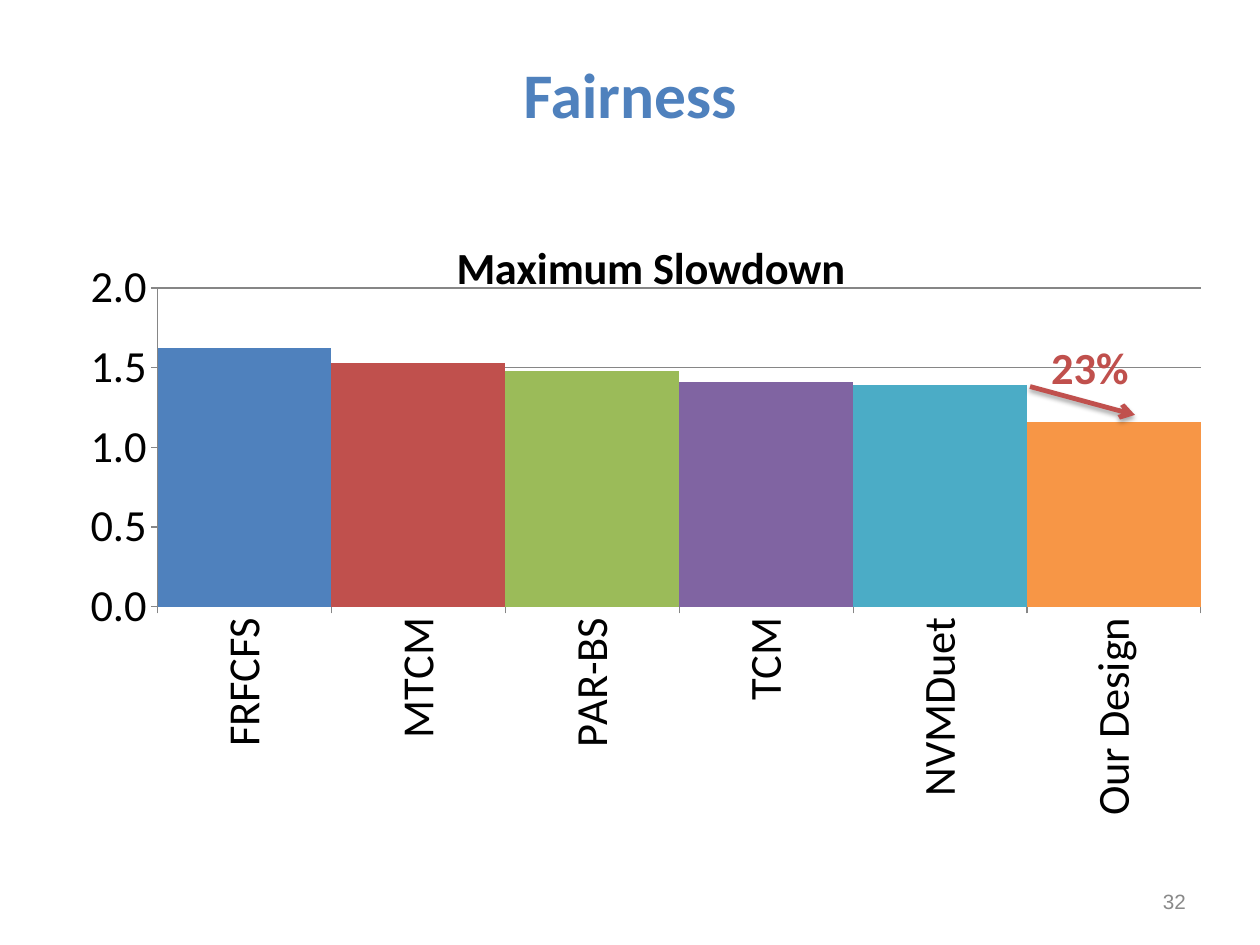
"""Build the Fairness slide: a maximum slowdown column chart with a callout."""
from pptx import Presentation, util as u
from pptx.chart import data
from pptx.dml import color
from pptx.enum import chart as ch, shapes, text
from pptx.oxml import parse_xml
from pptx.oxml.ns import nsdecls, qn

C = {"blue": "4F81BD", "red": "C0504D", "green": "9BBB59", "purple": "8064A2",
     "teal": "4BACC6", "orange": "F79646", "black": "000000",
     "grey": "898989", "axis": "868686"}
SLOWDOWN = [("FRFCFS", 1.62, "blue"), ("MTCM", 1.53, "red"),
            ("PAR-BS", 1.48, "green"), ("TCM", 1.41, "purple"),
            ("NVMDuet", 1.39, "teal"), ("Our Design", 1.16, "orange")]


def set_font(font, name, size, key, bold=False):
    font.name, font.size, font.bold = name, u.Pt(size), bold
    font.color.rgb = color.RGBColor.from_string(C[key])


def set_layout(parent, index, target="", **place):
    for old in parent.findall(qn("c:layout")):
        parent.remove(old)
    modes = "".join(f'<c:{k}Mode val="edge"/>' for k in "xy")
    values = "".join(f'<c:{k} val="{v}"/>' for k, v in place.items())
    parent.insert(index, parse_xml(
        f'<c:layout {nsdecls("c")}><c:manualLayout>{target}{modes}{values}'
        '</c:manualLayout></c:layout>'))


prs = Presentation()
prs.slide_width, prs.slide_height = u.Cm(28), u.Cm(21)
s = prs.slides.add_slide(prs.slide_layouts[6])

cd = data.CategoryChartData(number_format="0.00")
cd.categories = [name for name, _, _ in SLOWDOWN]
cd.add_series("Maximum Slowdown", [value for _, value, _ in SLOWDOWN])
chart = s.shapes.add_chart(ch.XL_CHART_TYPE.COLUMN_CLUSTERED, u.Cm(1.73), u.Cm(4.37),
                           u.Cm(24.97), u.Cm(14.4), cd).chart
set_font(chart.font, "Calibri", 18, "black")
chart.has_legend = False
chart.has_title = True
p = chart.chart_title.text_frame.paragraphs[0]
p.text = "Maximum Slowdown"
set_font(p.font, "Calibri", 28, "black", True)
set_layout(chart.chart_title._element, 1, x=0.33, y=0.05)
set_layout(chart._chartSpace.chart.plotArea, 0, '<c:layoutTarget val="inner"/>',
           x=0.071, y=0.141, w=0.929, h=0.492)

plot = chart.plots[0]
plot.gap_width = 0
plot.vary_by_categories = False
for i, (_, _, key) in enumerate(SLOWDOWN):
    fill = plot.series[0].points[i].format.fill
    fill.solid()
    fill.fore_color.rgb = color.RGBColor.from_string(C[key])

val, cat = chart.value_axis, chart.category_axis
val.minimum_scale, val.maximum_scale, val.major_unit = 0, 2, 0.5
val.has_major_gridlines = True
val.tick_labels.number_format = "#,##0.0"
val.tick_labels.number_format_is_linked = False
for axis in (val, cat):
    axis.major_tick_mark = ch.XL_TICK_MARK.OUTSIDE
    axis.minor_tick_mark = ch.XL_TICK_MARK.NONE
    set_font(axis.tick_labels.font, "Calibri", 28, "black")
for line in (val.format.line, cat.format.line, val.major_gridlines.format.line):
    line.width = u.Pt(0.75)
    line.color.rgb = color.RGBColor.from_string(C["axis"])
cat._element.find(qn("c:txPr")).find(qn("a:bodyPr")).set("rot", "-5400000")

arrow = s.shapes.add_connector(shapes.MSO_CONNECTOR.STRAIGHT, u.Cm(22.89), u.Cm(8.59),
                               u.Cm(25.22), u.Cm(9.22))
arrow.line.width = u.Pt(3)
arrow.line.color.rgb = color.RGBColor.from_string(C["red"])
arrow.line._get_or_add_ln().append(parse_xml(f'<a:tailEnd {nsdecls("a")} type="arrow"/>'))
arrow._element.spPr.append(parse_xml(
    f'<a:effectLst {nsdecls("a")}><a:outerShdw blurRad="{u.Pt(3.1)}" dist="{u.Pt(1.8)}" '
    f'dir="5400000" rotWithShape="0"><a:srgbClr val="{C["black"]}"><a:alpha val="35000"/>'
    '</a:srgbClr></a:outerShdw></a:effectLst>'))

A, V = text.PP_ALIGN, text.MSO_ANCHOR
TEXTS = [
    ("Fairness", (1.4, 0.84, 25.2, 2.46), A.CENTER, V.MIDDLE, "Calibri", 40, "blue", True),
    ("32", (20.07, 19.46, 6.53, 1.12), A.RIGHT, V.MIDDLE, "Arial", 13, "grey", False),
    ("23%", (23.11, 7.54, 2.54, 1.37), A.LEFT, V.TOP, "Calibri", 28, "red", True),
]
for words, box, align, anchor, name, size, key, bold in TEXTS:
    tf = s.shapes.add_textbox(*map(u.Cm, box)).text_frame
    tf.word_wrap = True
    tf.vertical_anchor = anchor
    p = tf.paragraphs[0]
    p.text, p.alignment = words, align
    set_font(p.font, name, size, key, bold)
p.line_spacing = 0.93

prs.save("out.pptx")
